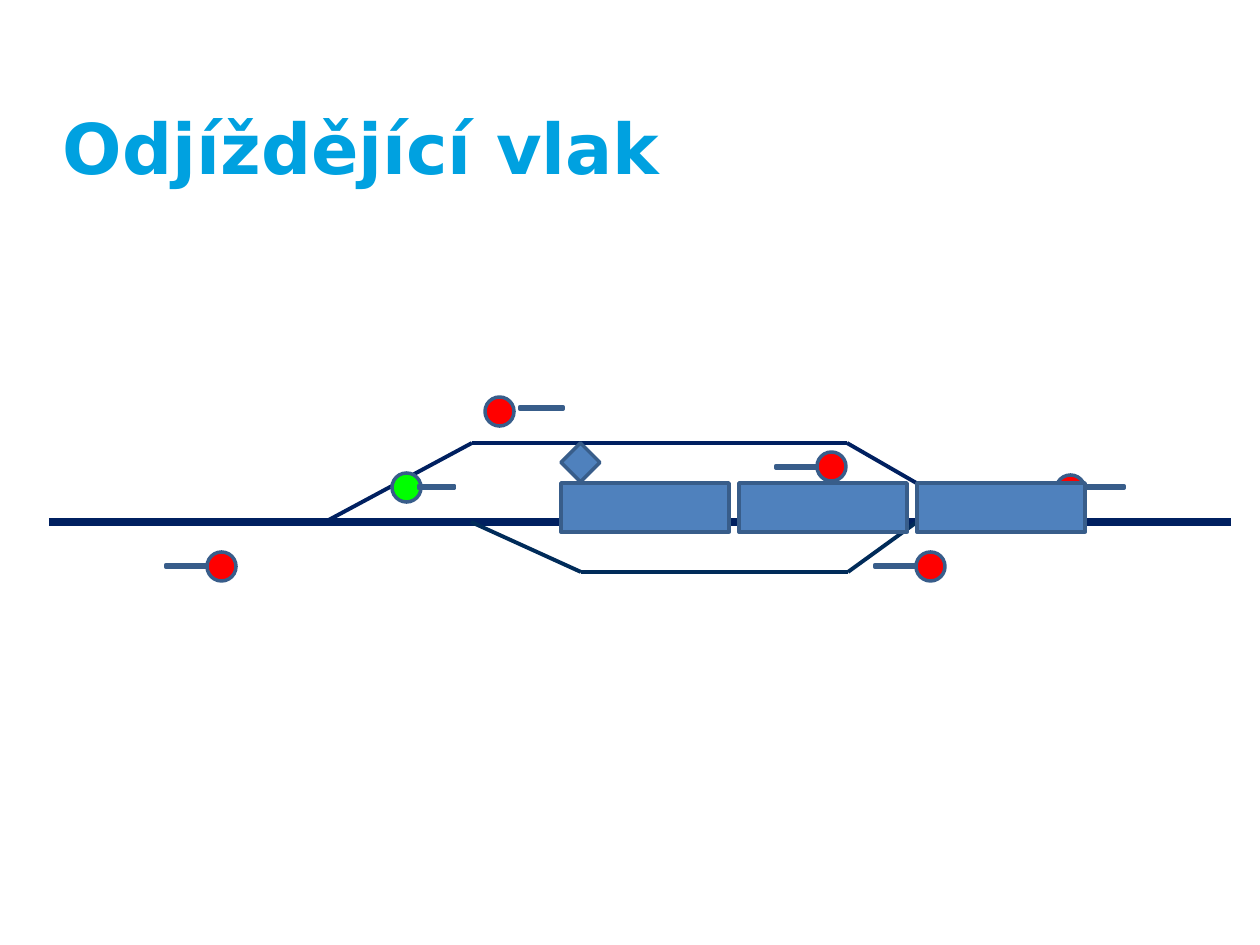
from dataclasses import dataclass
from itertools import pairwise

from lxml import etree
from pptx import Presentation
from pptx.dml.color import RGBColor
from pptx.enum.shapes import MSO_CONNECTOR, MSO_SHAPE
from pptx.enum.text import MSO_ANCHOR, PP_ALIGN
from pptx.oxml.ns import qn
from pptx.util import Pt

STRAIGHT = MSO_CONNECTOR.STRAIGHT
LAMP = MSO_SHAPE.FLOWCHART_CONNECTOR
POST = MSO_SHAPE.MATH_MINUS
WAGON = MSO_SHAPE.FLOWCHART_PROCESS
DIAMOND = MSO_SHAPE.DIAMOND
TOP = MSO_ANCHOR.TOP
LEFT = PP_ALIGN.LEFT

EMU_PER_PX = 914400 // 126
STEEL, OUTLINE = "4F81BD", "385D8A"
RED, GREEN = "FF0000", "00FF00"
LAMP_SIZE, POST_HEIGHT = 29, 10
WAGON_COUNT, WAGON_LEFT, WAGON_TOP, WAGON_PITCH = 3, 561, 483, 178
WAGON_WIDTH, WAGON_HEIGHT = 168, 49


@dataclass(frozen=True)
class Track:
    points: tuple[tuple[int, int], ...]
    color: str
    width: float


@dataclass(frozen=True)
class Signal:
    lamp_left: int
    lamp_top: int
    post_left: int
    post_top: int
    color: str = RED
    post_width: int = 59


TRACKS = (
    Track(((49, 522), (1231, 522)), "002060", 4.5),
    Track(((325, 522), (472, 443), (847, 443), (984, 522)), "002060", 2.25),
    Track(((471, 522), (581, 572), (848, 572), (917, 522)), "002B59", 2.25),
)
SIGNALS = (
    Signal(207, 552, 158, 561),
    Signal(817, 452, 768, 462),
    Signal(916, 552, 867, 561),
    Signal(1056, 475, 1073, 482),
    Signal(485, 397, 512, 403),
    Signal(392, 473, 412, 482, GREEN, 49),
)


def px(length: int) -> int:
    return length * EMU_PER_PX


def rgb(color: str) -> RGBColor:
    return RGBColor.from_string(color)


def draw_shape(page, kind, left: int, top: int, width: int, height: int,
               color: str) -> None:
    shape = page.shapes.add_shape(kind, px(left), px(top), px(width), px(height))
    shape.shadow.inherit = False
    shape.fill.solid()
    shape.fill.fore_color.rgb = rgb(color)
    shape.line.color.rgb = rgb(OUTLINE)
    shape.line.width = Pt(2)


def draw_track(page, track: Track) -> None:
    for (x1, y1), (x2, y2) in pairwise(track.points):
        rail = page.shapes.add_connector(STRAIGHT, px(x1), px(y1), px(x2), px(y2))
        rail.line.color.rgb = rgb(track.color)
        rail.line.width = Pt(track.width)
        etree.SubElement(rail._element.spPr, qn("a:effectLst"))


def draw_signal(page, signal: Signal) -> None:
    parts = [
        (LAMP, signal.lamp_left, signal.lamp_top, LAMP_SIZE, LAMP_SIZE, signal.color),
        (POST, signal.post_left, signal.post_top, signal.post_width, POST_HEIGHT, STEEL),
    ]
    for part in sorted(parts, key=lambda item: item[1]):
        draw_shape(page, *part)


def draw_title(page, text: str) -> None:
    box = page.shapes.add_textbox(px(63), px(18), px(1134), px(198))
    frame = box.text_frame
    frame.word_wrap = True
    frame.vertical_anchor = TOP
    frame.margin_left = frame.margin_right = frame.margin_bottom = 0
    frame.margin_top = px(89)
    para = frame.paragraphs[0]
    para.alignment = LEFT
    span = para.add_run()
    span.text = text
    span.font.name = "DejaVu Sans"
    span.font.size = Pt(40)
    span.font.bold = True
    span.font.color.rgb = rgb("00A1E0")


def main() -> None:
    deck = Presentation()
    deck.slide_width, deck.slide_height = px(1260), px(945)
    page = deck.slides.add_slide(deck.slide_layouts[6])
    draw_title(page, "Odjíždějící vlak")
    for track in TRACKS:
        draw_track(page, track)
    for signal in SIGNALS:
        draw_signal(page, signal)
    draw_shape(page, DIAMOND, 561, 443, 39, 39, STEEL)
    for index in range(WAGON_COUNT):
        draw_shape(page, WAGON, WAGON_LEFT + index * WAGON_PITCH, WAGON_TOP,
                   WAGON_WIDTH, WAGON_HEIGHT, STEEL)
    deck.save("out.pptx")


if __name__ == "__main__":
    main()
